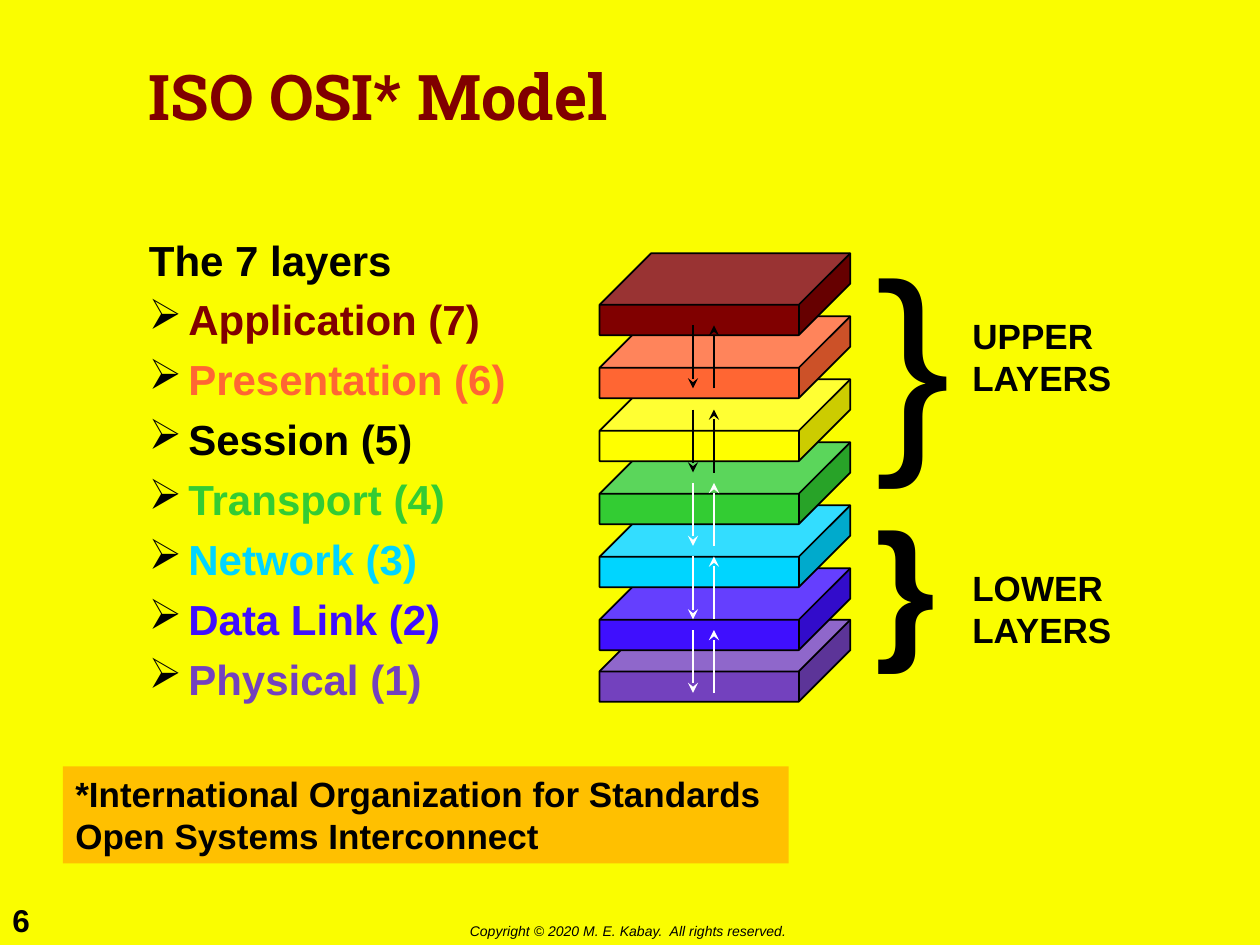
from lxml.etree import SubElement
from pptx import Presentation
from pptx.dml.color import RGBColor
from pptx.enum.shapes import MSO_CONNECTOR as Connector, MSO_SHAPE as Shape
from pptx.enum.text import MSO_ANCHOR as Anchor, MSO_AUTO_SIZE as AutoSize, PP_ALIGN as Align
from pptx.oxml.ns import qn
from pptx.util import Pt

COLORS = {
    "background": "FAFD00", "ink": "000000", "light": "FFFFFF", "maroon": "800000",
    "orange": "FF6633", "yellow": "FFFF00", "green": "33CC33", "cyan": "00D5FF",
    "blue": "3F0FFE", "purple": "7341BE", "note": "FFC000",
}
LAYERS = [
    ("Application (7)", "maroon", "maroon", 144.7),
    ("Presentation (6)", "orange", "orange", 180.7),
    ("Session (5)", "ink", "yellow", 216.7),
    ("Transport (4)", "green", "green", 252.7),
    ("Network (3)", "cyan", "cyan", 288.7),
    ("Data Link (2)", "blue", "blue", 324.7),
    ("Physical (1)", "purple", "purple", 354.2),
]
EXCHANGES = [(186, "ink"), (234, "ink"), (276, "light"), (318, "light"), (360, "light")]
TITLE = {"name": "Roboto Slab", "size": Pt(36), "bold": True}
BODY = {"name": "Arial", "size": Pt(24), "bold": True}
LABEL = {"name": "Arial", "size": Pt(20), "bold": True}
NUMBER = {"name": "Arial", "size": Pt(18), "bold": True}
FOOTER = {"name": "Arial", "size": Pt(8), "italic": True}
UPPER_BRACE = {"name": "Arial", "size": Pt(129)}
LOWER_BRACE = {"name": "Arial", "size": Pt(88), "bold": True}
GROWING = {"word_wrap": False, "auto_size": AutoSize.SHAPE_TO_FIT_TEXT}
BRACED = {"word_wrap": True, "auto_size": AutoSize.SHAPE_TO_FIT_TEXT}
CENTERED = {"alignment": Align.CENTER}
TIGHT = {"line_spacing": 0.9}
LISTED = {"line_spacing": 0.9, "space_before": Pt(8.3)}


def rgb(color):
    return RGBColor.from_string(COLORS[color])


def assign(target, values):
    for name, value in values.items():
        setattr(target, name, value)


class LayerSlide:
    """Draws the elements of the layer model on one slide."""

    def __init__(self, slide):
        self.slide = slide
        slide.background.fill.solid()
        slide.background.fill.fore_color.rgb = rgb("background")

    def add_words(self, paragraph, words, font, color="ink", layout=None):
        assign(paragraph, layout or {})
        run = paragraph.add_run()
        run.text = words
        assign(run.font, font)
        run.font.color.rgb = rgb(color)

    def fill_frame(self, frame, lines, font, color="ink", layout=None):
        for index, words in enumerate(lines):
            paragraph = frame.add_paragraph() if index else frame.paragraphs[0]
            self.add_words(paragraph, words, font, color, layout)

    def text(self, box, lines, font, settings, color="ink", layout=None):
        frame = self.slide.shapes.add_textbox(*map(Pt, box)).text_frame
        assign(frame, settings)
        self.fill_frame(frame, lines, font, color, layout)
        return frame

    def bullet(self, frame, words, color):
        paragraph = frame.add_paragraph()
        properties = paragraph._p.get_or_add_pPr()
        self.indent(properties)
        marker = SubElement(properties, qn("a:buClr"))
        SubElement(marker, qn("a:srgbClr"), val=COLORS["ink"])
        SubElement(properties, qn("a:buChar"), char="➢")
        self.add_words(paragraph, words, BODY, color, LISTED)

    def indent(self, properties):
        properties.set("marL", str(Pt(22.5)))
        properties.set("indent", str(Pt(-22.5)))

    def shape(self, kind, box, color):
        shape = self.slide.shapes.add_shape(kind, *map(Pt, box))
        shape.shadow.inherit = False
        shape.fill.solid()
        shape.fill.fore_color.rgb = rgb(color)
        return shape

    def cube(self, top, color):
        cube = self.shape(Shape.CUBE, (342.6, top, 143.3, 46.8), color)
        cube.adjustments[0] = 0.63
        cube.line.color.rgb = rgb("ink")
        cube.line.width = Pt(1)

    def note(self, box, lines):
        note = self.shape(Shape.RECTANGLE, box, "note")
        note.line.fill.background()
        assign(note.text_frame, {**GROWING, "vertical_anchor": Anchor.TOP})
        self.fill_frame(note.text_frame, lines, LABEL, layout={"alignment": Align.LEFT})

    def arrow(self, x, start, end, color):
        arrow = self.slide.shapes.add_connector(
            Connector.STRAIGHT, Pt(x), Pt(start), Pt(x), Pt(end))
        arrow.line.color.rgb = rgb(color)
        arrow.line.width = Pt(1)
        properties = arrow._element.spPr
        SubElement(properties.find(qn("a:ln")), qn("a:tailEnd"), type="stealth")
        SubElement(properties, qn("a:effectLst"))


def main():
    deck = Presentation()
    deck.slide_width, deck.slide_height = Pt(720), Pt(540)
    page = LayerSlide(deck.slides.add_slide(deck.slide_layouts[6]))

    page.text((0, 511.2, 36, 28.8), ["6"], NUMBER, GROWING)
    page.text((261.4, 523.4, 196.6, 16.6),
              ["Copyright © 2020 M. E. Kabay.  All rights reserved."], FOOTER, GROWING)
    page.text((78, 12, 564, 90), ["ISO OSI* Model"], TITLE,
              {"word_wrap": True, "vertical_anchor": Anchor.MIDDLE}, "maroon", TIGHT)

    layer_list = page.text((78, 108, 564, 390), ["The 7 layers"], BODY,
                           {"word_wrap": True, "margin_top": Pt(29)}, layout=TIGHT)
    page.indent(layer_list.paragraphs[0]._p.get_or_add_pPr())
    for words, text_color, _, _ in LAYERS:
        page.bullet(layer_list, words, text_color)
    for _, _, cube_color, top in reversed(LAYERS):
        page.cube(top, cube_color)

    for level, top in (("UPPER", 176.4), ("LOWER", 320.4)):
        page.text((548.6, top, 95.8, 55.2), [level, "LAYERS"], LABEL, GROWING)
    for top, height, font in ((120.2, 162, UPPER_BRACE), (275.8, 113, LOWER_BRACE)):
        page.text((493.2, top, 40.3, height), ["}"], font, BRACED, layout=CENTERED)

    for top, color in EXCHANGES:
        page.arrow(396, top, top + 36, color)
        page.arrow(408, top + 36, top, color)

    page.note((36, 438, 414.7, 55.4),
              ["*International Organization for Standards", "Open Systems Interconnect"])
    deck.save("out.pptx")


if __name__ == "__main__":
    main()
